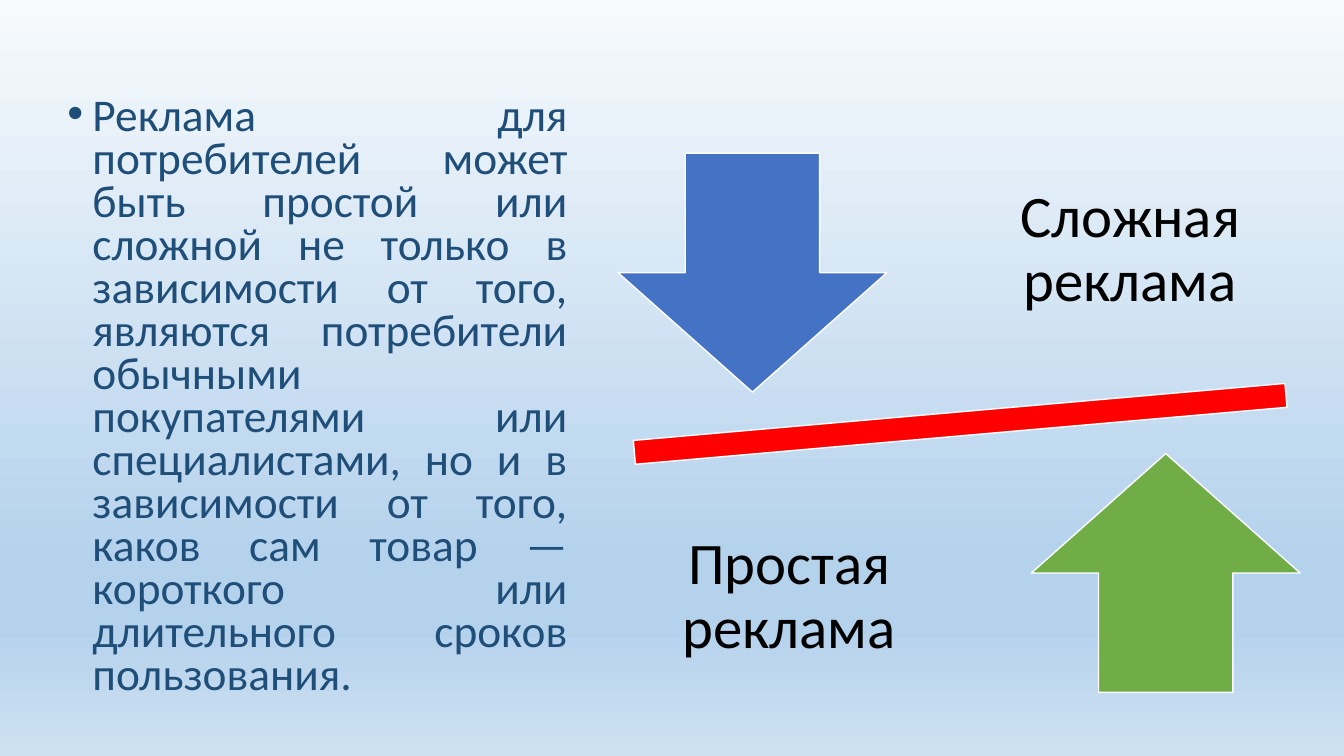
"""Slide comparing simple and complex advertising on a tilted balance."""
from lxml import etree
from pptx import Presentation
from pptx.dml.color import RGBColor
from pptx.enum import shapes, text
from pptx.oxml import ns
from pptx.util import Pt


def colour(value):
    """Turn a hex string into a colour."""
    return RGBColor.from_string(value)


class BalanceSlide:
    """Holds the style and the current slide."""

    font = "Calibri"
    outline = "FFFFFF"

    def __init__(self, deck):
        """Add a blank slide."""
        self.slide = deck.slides.add_slide(deck.slide_layouts[6])

    def background(self, stops, angle):
        """Fill the background with a linear gradient."""
        fill = self.slide.background.fill
        fill.gradient()
        gradient = fill._fill._gradFill
        stop_list = gradient.find(ns.qn("a:gsLst"))
        for old_stop in list(stop_list):
            stop_list.remove(old_stop)
        for percent, value in stops:
            stop = etree.SubElement(stop_list, ns.qn("a:gs"), pos=str(percent * 1000))
            etree.SubElement(stop, ns.qn("a:srgbClr"), val=value)
        gradient.find(ns.qn("a:lin")).set("ang", str(angle * 60000))

    def shape(self, kind, box, fill, rotation=0):
        """Add a filled shape with a thin outline."""
        figure = self.slide.shapes.add_shape(kind, *map(Pt, box))
        figure.shadow.inherit = False
        figure.rotation = rotation
        figure.fill.solid()
        figure.fill.fore_color.rgb = colour(fill)
        figure.line.color.rgb = colour(self.outline)
        figure.line.width = Pt(1)

    def text(self, words, box, size, value, spacing, align, anchor, inset=None, bullet=None):
        """Add a wrapped one-paragraph text box."""
        frame = self.slide.shapes.add_textbox(*map(Pt, box)).text_frame
        frame.word_wrap = True
        frame.vertical_anchor = anchor
        if inset is not None:
            frame.margin_left = frame.margin_right = Pt(inset)
            frame.margin_top = frame.margin_bottom = Pt(inset)
        paragraph = frame.paragraphs[0]
        paragraph.alignment = align
        paragraph.line_spacing = spacing
        if bullet:
            properties = paragraph._p.get_or_add_pPr()
            properties.set("marL", str(Pt(18)))
            properties.set("indent", str(-Pt(18)))
            etree.SubElement(properties, ns.qn("a:buFont"), typeface="Arial")
            etree.SubElement(properties, ns.qn("a:buChar"), char=bullet)
        run = paragraph.add_run()
        run.text = words
        run.font.name = self.font
        run.font.size = Pt(size)
        run.font.color.rgb = colour(value)

    def label(self, words, left, top):
        """Add a centred label beside an arrow."""
        self.text(words, (left, top, 204.5, 179.3), 42, "000000", 0.9,
                  text.PP_ALIGN.CENTER, text.MSO_ANCHOR.MIDDLE, inset=23.5)


def main():
    """Build and save the slide."""
    deck = Presentation()
    deck.slide_width, deck.slide_height = Pt(960), Pt(540)
    page = BalanceSlide(deck)
    page.background([(0, "F7FAFD"), (74, "B5D2EC"), (83, "B5D2EC"), (100, "CEE1F2")], 90)
    page.text(
        "Реклама для потребителей может быть простой или сложной не только "
        "в зависимости от того, являются потребители обычными покупателями "
        "или специалистами, но и в зависимости от того, каков сам товар — "
        "короткого или длительного сроков пользования.",
        (41, 66, 371.5, 462), 32.4, "1F4E79", 0.79,
        text.PP_ALIGN.JUSTIFY, text.MSO_ANCHOR.TOP, bullet="•")
    kinds = shapes.MSO_SHAPE
    page.shape(kinds.MATH_MINUS, (368, 266.4, 635.8, 72.8), "FF0000", rotation=355)
    page.shape(kinds.DOWN_ARROW, (441.5, 109.5, 192, 170.6), "4472C4")
    page.label("Сложная реклама", 705, 89.3)
    page.shape(kinds.UP_ARROW, (736.7, 324, 192, 170.6), "70AD47")
    page.label("Простая реклама", 461.5, 337)
    deck.save("out.pptx")


if __name__ == "__main__":
    main()
